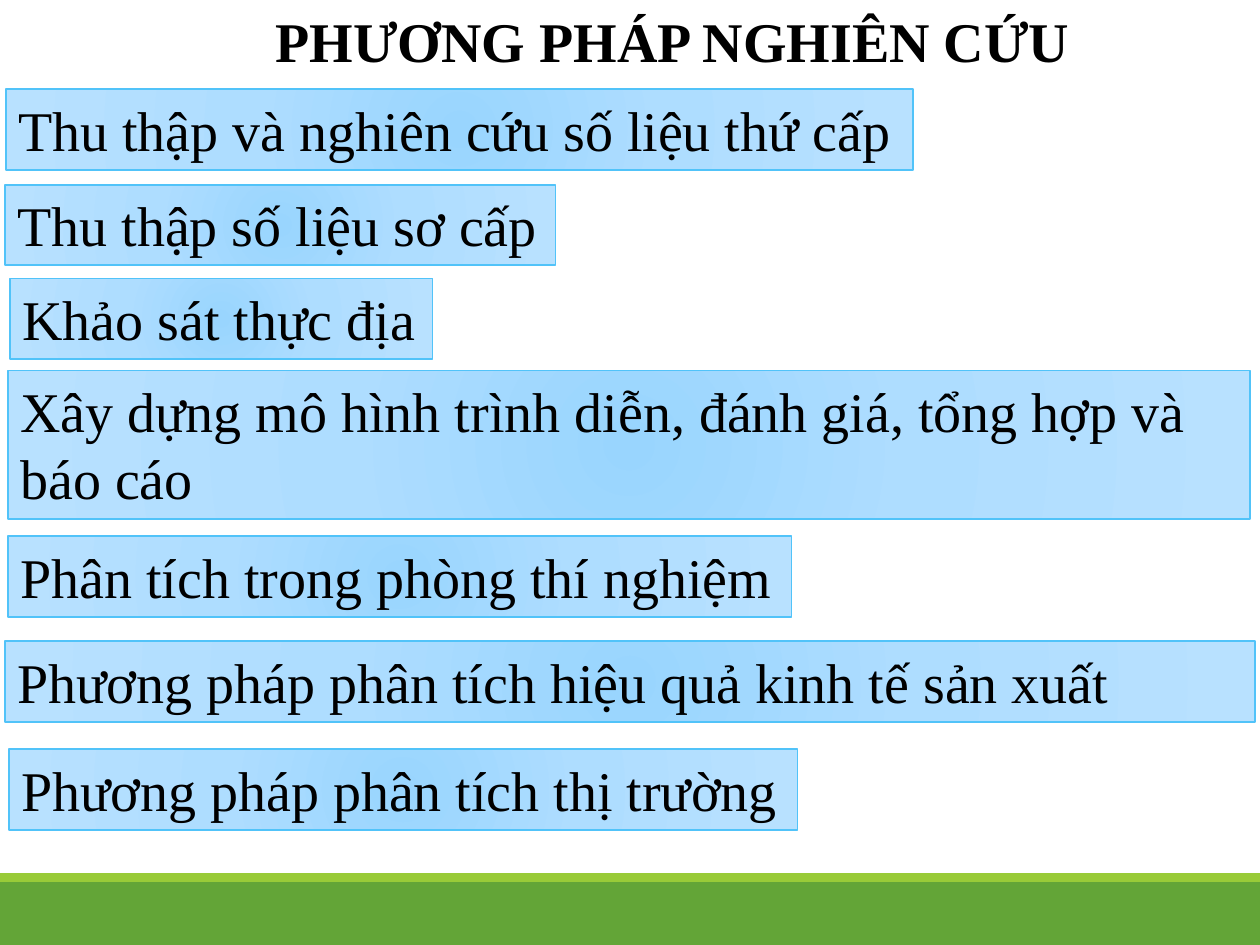
from pptx import Presentation
from pptx.dml.color import RGBColor
from pptx.enum.shapes import MSO_SHAPE
from pptx.enum.text import MSO_ANCHOR, MSO_AUTO_SIZE, PP_ALIGN
from pptx.oxml import parse_xml
from pptx.oxml.ns import nsdecls
from pptx.util import Pt

COLORS = {
    "text": "000000",
    "border": "51C3F9",
    "glow_center": "99D5FE",
    "glow_middle": "AEDDFF",
    "glow_edge": "B8E1FF",
    "footer": "63A537",
    "footer_stripe": "99CB38",
}
FONT = "Times New Roman"
SLIDE_WIDTH, SLIDE_HEIGHT = 720, 540
LINE_HEIGHT = 46.08

METHODS = [
    ("Thu thập và nghiên cứu số liệu thứ cấp", 3.4, 50.9, 518.4, LINE_HEIGHT, False),
    ("Thu thập số liệu sơ cấp", 2.9, 105.6, 314.6, LINE_HEIGHT, False),
    ("Khảo sát thực địa", 5.8, 159.1, 241.4, LINE_HEIGHT, False),
    ("Xây dựng mô hình trình diễn, đánh giá, tổng hợp và báo cáo",
     4.5, 211.7, 709.9, 84.8, True),
    ("Phân tích trong phòng thí nghiệm", 4.5, 306.5, 447.8, LINE_HEIGHT, False),
    ("Phương pháp phân tích hiệu quả kinh tế sản xuất",
     2.9, 366.5, 714.2, LINE_HEIGHT, True),
    ("Phương pháp phân tích thị trường", 5, 428.2, 450.7, LINE_HEIGHT, False),
]


def color(name):
    return RGBColor.from_string(COLORS[name])


def write_text(frame, text, align, wrap=True, bold=False):
    frame.word_wrap = wrap
    frame.auto_size = MSO_AUTO_SIZE.SHAPE_TO_FIT_TEXT
    frame.vertical_anchor = MSO_ANCHOR.TOP
    paragraph = frame.paragraphs[0]
    paragraph.alignment = align
    run = paragraph.add_run()
    run.text = text
    run.font.name = FONT
    run.font.size = Pt(32)
    run.font.bold = bold
    run.font.color.rgb = color("text")


def add_rectangle(slide, left, top, width, height, fill):
    rectangle = slide.shapes.add_shape(
        MSO_SHAPE.RECTANGLE, Pt(left), Pt(top), Pt(width), Pt(height))
    rectangle.shadow.inherit = False
    rectangle.fill.solid()
    rectangle.fill.fore_color.rgb = color(fill)
    rectangle.line.fill.background()
    return rectangle


def apply_glow(rectangle):
    stops = "".join(
        f'<a:gs pos="{position * 1000}"><a:srgbClr val="{COLORS[name]}"/></a:gs>'
        for position, name in [(0, "glow_center"), (45, "glow_middle"), (100, "glow_edge")])
    gradient = parse_xml(
        f'<a:gradFill {nsdecls("a")} rotWithShape="1"><a:gsLst>{stops}</a:gsLst>'
        '<a:path path="circle"><a:fillToRect l="100000" t="100000" r="100000" b="100000"/>'
        '</a:path></a:gradFill>')
    properties = rectangle.element.spPr
    properties.replace(properties.find("{*}solidFill"), gradient)


def add_footer(slide, left, top, width, height):
    stripe = 5.04
    add_rectangle(slide, left, top + stripe, width, height - stripe, "footer")
    add_rectangle(slide, left, top, width, stripe, "footer_stripe")


def add_method(slide, text, left, top, width, height, wrap):
    method = add_rectangle(slide, left, top, width, height, "glow_center")
    apply_glow(method)
    method.line.color.rgb = color("border")
    method.line.width = Pt(1)
    write_text(method.text_frame, text, PP_ALIGN.LEFT, wrap)


def add_title(slide, left, top, width, height):
    title = slide.shapes.add_textbox(Pt(left), Pt(top), Pt(width), Pt(height))
    write_text(title.text_frame, "PHƯƠNG PHÁP NGHIÊN CỨU", PP_ALIGN.CENTER, bold=True)


def main():
    presentation = Presentation()
    presentation.slide_width = Pt(SLIDE_WIDTH)
    presentation.slide_height = Pt(SLIDE_HEIGHT)
    slide = presentation.slides.add_slide(presentation.slide_layouts[6])
    add_footer(slide, 0, 498.96, SLIDE_WIDTH, SLIDE_HEIGHT - 498.96)
    for method in METHODS:
        add_method(slide, *method)
    add_title(slide, 126.7, 0, 515.5, LINE_HEIGHT)
    presentation.save("out.pptx")


if __name__ == "__main__":
    main()
